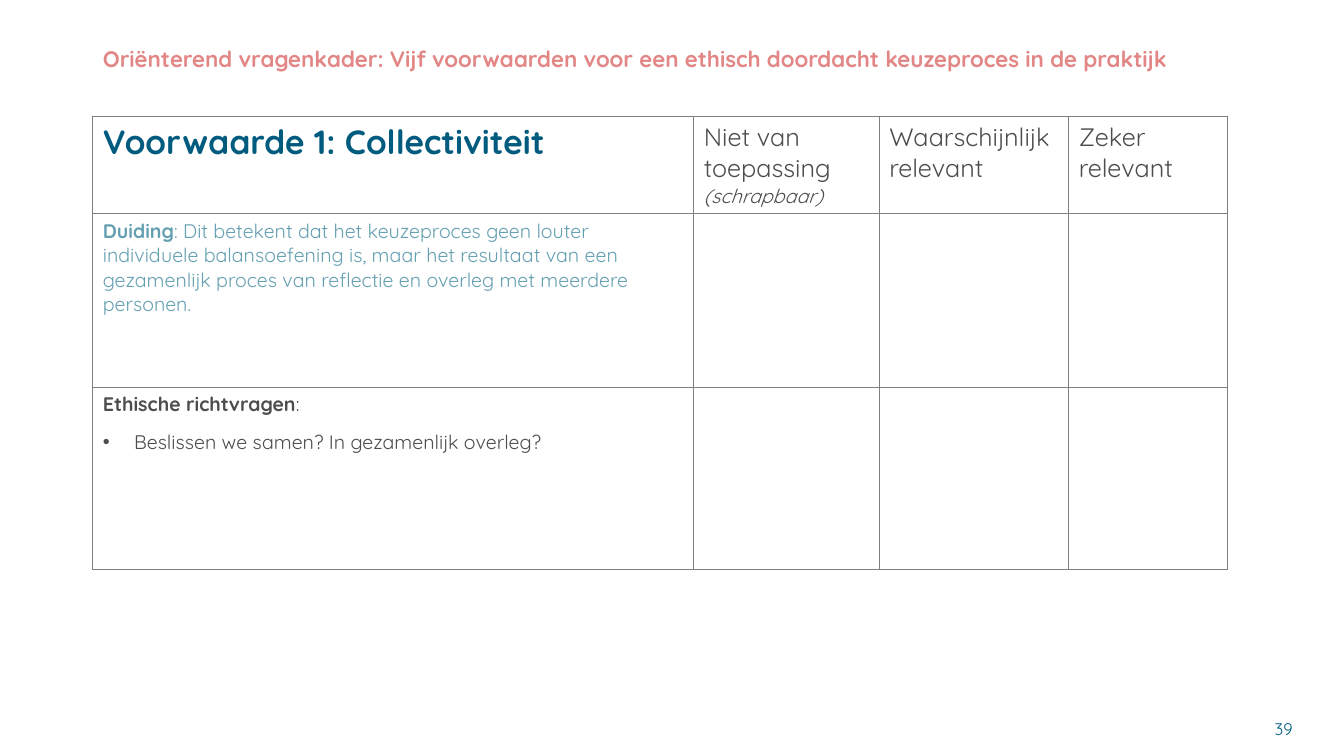
from dataclasses import dataclass
from typing import Optional

from lxml.etree import SubElement
from pptx import Presentation
from pptx.dml.color import RGBColor
from pptx.enum.text import MSO_ANCHOR as Anchor, MSO_AUTO_SIZE as AutoSize, PP_ALIGN as Align
from pptx.oxml.ns import qn
from pptx.util import Emu, Inches, Pt

FONT = "Quicksand"
CORAL = RGBColor(0xE2, 0x86, 0x86)
NAVY = RGBColor(0x00, 0x5B, 0x7F)
TEAL = RGBColor(0x65, 0xA0, 0xB2)
DARK_GREY = RGBColor(0x4D, 0x4D, 0x4D)
BORDER_GREY = RGBColor(0x80, 0x80, 0x80)

SLIDE_WIDTH, SLIDE_HEIGHT = Inches(13.33), Inches(7.5)
LEFT_MARGIN, CONTENT_WIDTH = Inches(0.92), Inches(11.24)
COLUMN_WIDTHS = [Inches(width) for width in (5.96, 1.84, 1.88, 1.57)]
ROW_HEIGHTS = [Inches(height) for height in (0.97, 1.72, 1.81)]
BULLET_INDENT = Inches(0.31)


@dataclass(frozen=True)
class TextRun:
    text: str
    size: int = 14
    color: RGBColor = DARK_GREY
    bold: bool = False
    italic: bool = False


@dataclass(frozen=True)
class TextLine:
    runs: tuple[TextRun, ...]
    bullet: bool = False
    align: Align = Align.LEFT
    line_spacing: Optional[float] = None


def line(text: str, size: int = 14, color: RGBColor = DARK_GREY,
         bold: bool = False, italic: bool = False) -> TextLine:
    """Make a line that holds a single run."""
    return TextLine((TextRun(text, size, color, bold, italic),))


TITLE = TextLine(
    (TextRun("Oriënterend vragenkader: Vijf voorwaarden voor een ethisch doordacht "
             "keuzeproces in de praktijk", 16, CORAL, bold=True),),
    line_spacing=0.9)
PAGE_NUMBER = TextLine((TextRun("39", 12, NAVY),), align=Align.RIGHT)

TABLE_ROWS: list[list[list[TextLine]]] = [
    [
        [line("Voorwaarde 1: Collectiviteit", 24, NAVY, bold=True)],
        [line("Niet van toepassing", 18), line("(schrapbaar)", italic=True)],
        [line("Waarschijnlijk relevant", 18)],
        [line("Zeker relevant", 18)],
    ],
    [[TextLine((
        TextRun("Duiding", color=TEAL, bold=True),
        TextRun(": Dit betekent dat het keuzeproces geen louter individuele balansoefening is, "
                "maar het resultaat van een gezamenlijk proces van reflectie en overleg met "
                "meerdere personen.", color=TEAL)))]],
    [[
        TextLine((TextRun("Ethische richtvragen", bold=True), TextRun(":"))),
        TextLine((TextRun("Beslissen we samen? In gezamenlijk overleg?"),),
                 bullet=True, line_spacing=1.2),
    ]],
]


def add_bullet(paragraph) -> None:
    properties = paragraph._p.get_or_add_pPr()
    properties.set("marL", str(BULLET_INDENT))
    properties.set("indent", str(-BULLET_INDENT))
    SubElement(properties, qn("a:buFont"), typeface="Arial")
    SubElement(properties, qn("a:buChar"), char="•")
    paragraph.space_before = Pt(6)


def write_lines(text_frame, lines: list[TextLine]) -> None:
    for index, text_line in enumerate(lines):
        paragraph = text_frame.add_paragraph() if index else text_frame.paragraphs[0]
        paragraph.alignment = text_line.align
        if text_line.bullet:
            add_bullet(paragraph)
        if text_line.line_spacing:
            paragraph.line_spacing = text_line.line_spacing
        for text_run in text_line.runs:
            run = paragraph.add_run()
            run.text = text_run.text
            font = run.font
            font.name, font.size = FONT, Pt(text_run.size)
            font.bold, font.italic = text_run.bold, text_run.italic
            font.color.rgb = text_run.color


def style_cell(cell) -> None:
    """Give the cell thin grey borders and no fill."""
    properties = cell._tc.get_or_add_tcPr()
    for side in ("lnL", "lnR", "lnT", "lnB"):
        border = SubElement(properties, qn(f"a:{side}"), w=str(Pt(0.5)))
        fill = SubElement(border, qn("a:solidFill"))
        SubElement(fill, qn("a:srgbClr"), val=str(BORDER_GREY))
    cell.fill.background()


def add_title(slide) -> None:
    title = slide.shapes.title
    title.left, title.top = LEFT_MARGIN, Inches(0.4)
    title.width, title.height = CONTENT_WIDTH, Inches(0.4)
    frame = title.text_frame
    frame.auto_size, frame.vertical_anchor = AutoSize.NONE, Anchor.MIDDLE
    write_lines(frame, [TITLE])


def add_conditions_table(slide) -> None:
    table = slide.shapes.add_table(
        len(ROW_HEIGHTS), len(COLUMN_WIDTHS), LEFT_MARGIN, Inches(1.15),
        CONTENT_WIDTH, Emu(sum(ROW_HEIGHTS))).table
    table.first_row = table.horz_banding = False
    for column, width in zip(table.columns, COLUMN_WIDTHS):
        column.width = width
    for row, height, contents in zip(table.rows, ROW_HEIGHTS, TABLE_ROWS):
        row.height = height
        for cell in row.cells:
            style_cell(cell)
        for cell, lines in zip(row.cells, contents):
            write_lines(cell.text_frame, lines)


def add_page_number(slide) -> None:
    box = slide.shapes.add_textbox(Inches(9.92), Inches(7.08), Inches(3), Inches(0.4))
    box.text_frame.word_wrap = True
    write_lines(box.text_frame, [PAGE_NUMBER])


def main() -> None:
    presentation = Presentation()
    presentation.slide_width, presentation.slide_height = SLIDE_WIDTH, SLIDE_HEIGHT
    title_only = presentation.slide_layouts.get_by_name("Title Only")
    slide = presentation.slides.add_slide(title_only)
    add_title(slide)
    add_page_number(slide)
    add_conditions_table(slide)
    presentation.save("out.pptx")


if __name__ == "__main__":
    main()
